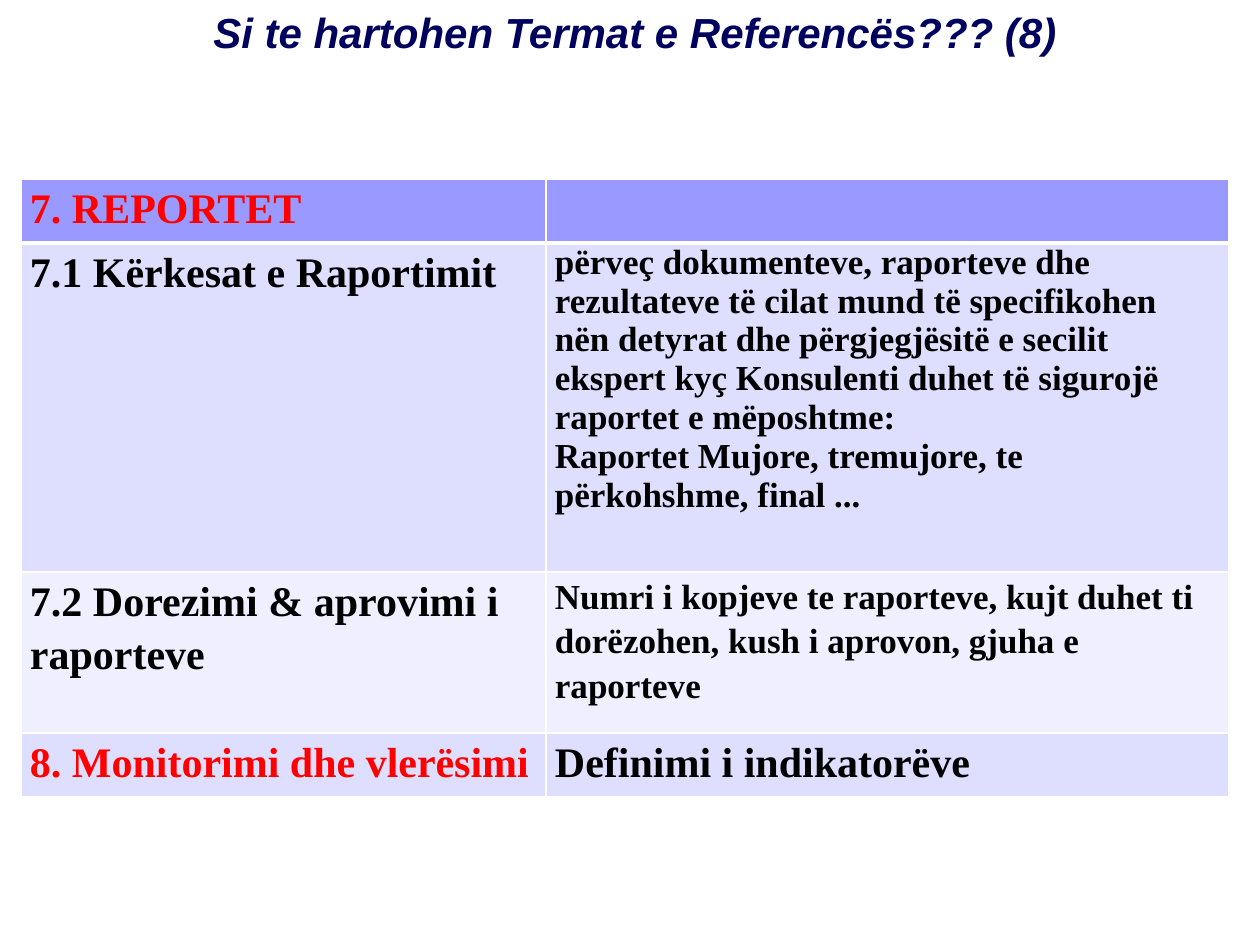
from lxml import etree
from pptx import Presentation
from pptx.dml.color import RGBColor
from pptx.enum.text import MSO_ANCHOR, PP_ALIGN
from pptx.oxml.ns import qn
from pptx.util import Emu, Pt

PX = 914400 // 126
COLUMNS = (525, 683)
ROW_HEIGHTS = (64, 329, 161, 64)
ROW_FILLS = ("9999FF", "DEDEFF", "EFEFFF", "DEDEFF")
RED, BLACK, WHITE, NAVY = "FF0000", "000000", "FFFFFF", "00005E"

# Each cell: paragraphs, size, colour, line spacing
ROWS = (
    ((["7. REPORTET"], 24, RED, 1.15), None),
    ((["7.1 Kërkesat e Raportimit"], 24, BLACK, 1.15),
     (["përveç dokumenteve, raporteve dhe rezultateve të cilat mund të "
       "specifikohen nën detyrat dhe përgjegjësitë e secilit ekspert kyç "
       "Konsulenti duhet të sigurojë raportet e mëposhtme:",
       "Raportet Mujore, tremujore, te përkohshme, final ..."], 20, BLACK, 1.0)),
    ((["7.2 Dorezimi & aprovimi i raporteve"], 24, BLACK, 1.15),
     (["Numri i kopjeve te raporteve, kujt duhet ti dorëzohen, "
       "kush i aprovon, gjuha e raporteve"], 20, BLACK, 1.15)),
    ((["8. Monitorimi dhe vlerësimi"], 24, RED, 1.15),
     (["Definimi i indikatorëve"], 24, BLACK, 1.15)),
)


def px(count):
    return Emu(count * PX)


def rgb(value):
    return RGBColor.from_string(value)


def style_font(font, name, size, color, italic=False):
    font.name, font.size = name, Pt(size)
    font.bold, font.italic = True, italic
    font.color.rgb = rgb(color)


def add_title(page, text):
    box = page.shapes.add_textbox(px(10), 0, px(1250), px(116))
    box.text_frame.word_wrap = True
    para = box.text_frame.paragraphs[0]
    para.text = text
    para.alignment = PP_ALIGN.CENTER
    style_font(para.font, "Arial", 24, NAVY, italic=True)


def set_borders(cell, bottom_width):
    """Draw white cell borders, which must come before the fill in the XML."""
    properties = cell._tc.get_or_add_tcPr()
    widths = (("lnL", 1), ("lnR", 1), ("lnT", 1), ("lnB", bottom_width))
    for index, (tag, width) in enumerate(widths):
        line = etree.Element(qn(f"a:{tag}"), w=str(Pt(width)))
        fill = etree.SubElement(line, qn("a:solidFill"))
        etree.SubElement(fill, qn("a:srgbClr"), val=WHITE)
        properties.insert(index, line)


def write_cell(cell, content):
    cell.margin_left = cell.margin_right = px(9)
    cell.margin_top = cell.margin_bottom = 0
    cell.vertical_anchor = MSO_ANCHOR.TOP
    if content is None:
        return
    texts, size, color, spacing = content
    cell.text = "\n".join(texts)
    for para in cell.text_frame.paragraphs:
        para.line_spacing = spacing
        style_font(para.font, "Times New Roman", size, color)


def add_reports_table(page):
    frame = page.shapes.add_table(len(ROWS), len(COLUMNS), px(21), px(179),
                                  px(sum(COLUMNS)), px(sum(ROW_HEIGHTS)))
    table = frame.table
    for column, width in zip(table.columns, COLUMNS):
        column.width = px(width)
    for row_index, contents in enumerate(ROWS):
        row = table.rows[row_index]
        row.height = px(ROW_HEIGHTS[row_index])
        for cell, content in zip(row.cells, contents):
            write_cell(cell, content)
            cell.fill.solid()
            cell.fill.fore_color.rgb = rgb(ROW_FILLS[row_index])
            set_borders(cell, 3 if row_index == 0 else 1)


def main():
    deck = Presentation()
    deck.slide_width, deck.slide_height = px(1260), px(945)
    page = deck.slides.add_slide(deck.slide_layouts[6])
    add_title(page, "Si te hartohen Termat e Referencës??? (8)")
    add_reports_table(page)
    deck.save("out.pptx")


if __name__ == "__main__":
    main()
